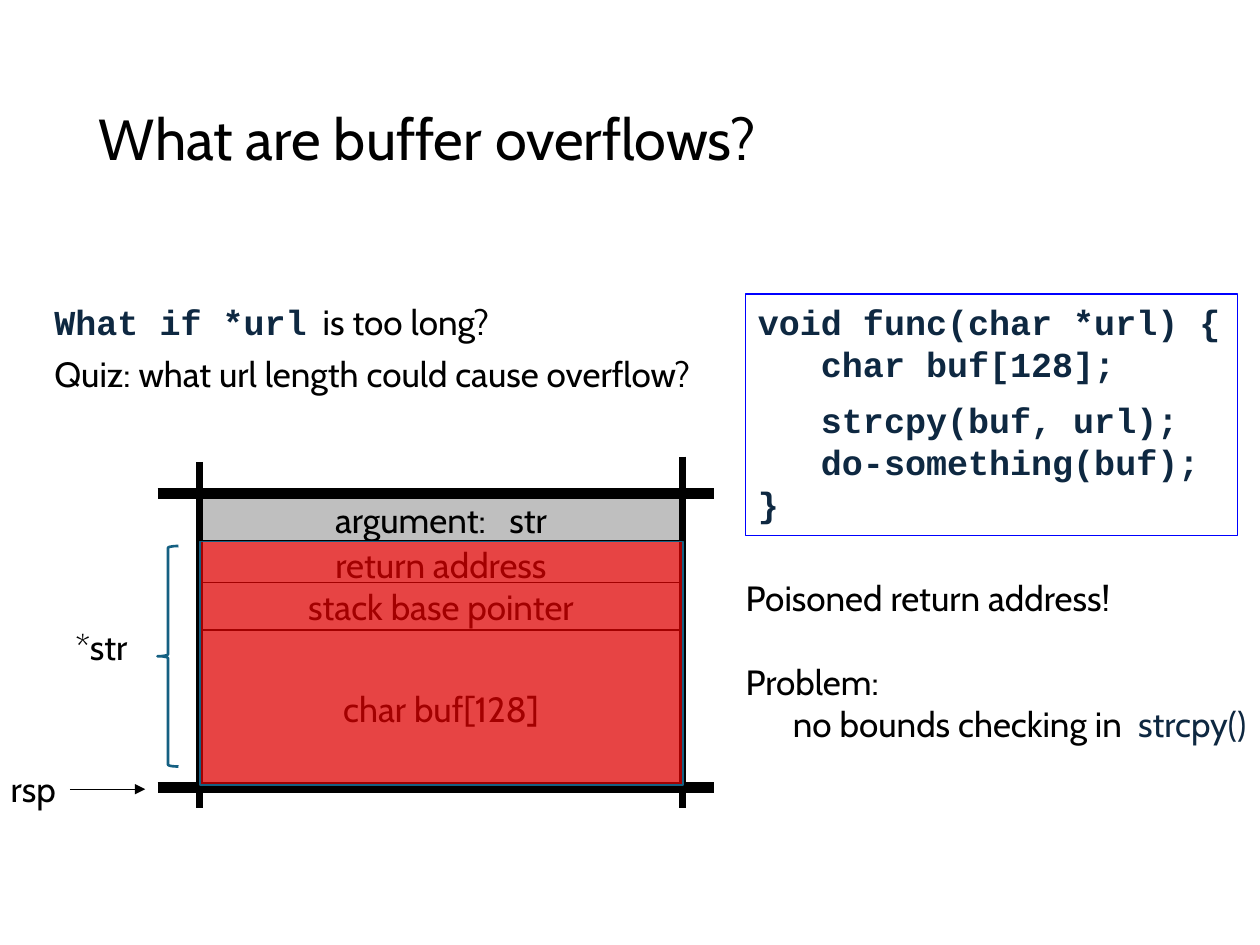
from dataclasses import dataclass

from lxml.etree import SubElement
from pptx import Presentation
from pptx.dml.color import RGBColor
from pptx.enum.shapes import MSO_CONNECTOR as Connector, MSO_SHAPE as Preset
from pptx.enum.text import MSO_ANCHOR as Anchor, MSO_AUTO_SIZE as AutoSize, PP_ALIGN as Align
from pptx.oxml.ns import qn
from pptx.util import Pt


@dataclass(frozen=True)
class Theme:
    black: str = "000000"
    navy: str = "0E2841"
    gray: str = "BFBFBF"
    blue: str = "0000FF"
    red: str = "FF0000"
    teal: str = "156082"
    title_size: int = 33
    body_size: int = 20
    body_font: str = "Cabin"
    code_font: str = "Courier New"


@dataclass
class Paragraph:
    runs: list
    before: float = 0
    indent: float = 0
    align: object = Align.LEFT
    spacing: float = 1.0


class SlideBuilder:
    def __init__(self, slide, theme):
        self.slide = slide
        self.theme = theme

    def plain(self, text, color=None, size=None):
        theme = self.theme
        return text, theme.body_font, color or theme.black, size or theme.body_size, False

    def code(self, text):
        theme = self.theme
        return text, theme.code_font, theme.navy, theme.body_size, True

    def fill_text(self, shape, paragraphs, anchor=Anchor.TOP, fit=False, wrap=False):
        frame = shape.text_frame
        frame.word_wrap = wrap
        frame.vertical_anchor = anchor
        frame.auto_size = AutoSize.SHAPE_TO_FIT_TEXT if fit else AutoSize.NONE
        for index, content in enumerate(paragraphs):
            paragraph = frame.add_paragraph() if index else frame.paragraphs[0]
            paragraph.alignment = content.align
            paragraph.line_spacing = content.spacing
            paragraph.space_before = Pt(content.before)
            if content.indent:
                properties = paragraph._p.get_or_add_pPr()
                properties.set("marL", str(Pt(content.indent)))
                properties.set("indent", "0")
            for text, font_name, color, size, bold in content.runs:
                for line_number, line in enumerate(text.split("\n")):
                    if line_number:
                        paragraph.add_line_break()
                    run = paragraph.add_run()
                    run.text = line
                    run.font.name = font_name
                    run.font.size = Pt(size)
                    run.font.bold = bold
                    run.font.color.rgb = RGBColor.from_string(color)

    def text(self, left, top, width, height, paragraphs, **options):
        shape = self.slide.shapes.add_textbox(Pt(left), Pt(top), Pt(width), Pt(height))
        self.fill_text(shape, paragraphs, **options)
        return shape

    def shape(self, preset, left, top, width, height, line, weight, fill=None, opacity=None):
        shape = self.slide.shapes.add_shape(preset, Pt(left), Pt(top), Pt(width), Pt(height))
        shape.shadow.inherit = False
        shape.line.color.rgb = RGBColor.from_string(line)
        shape.line.width = Pt(weight)
        if fill:
            shape.fill.solid()
            shape.fill.fore_color.rgb = RGBColor.from_string(fill)
        else:
            shape.fill.background()
        if opacity is not None:
            color = shape._element.spPr.find(qn("a:solidFill"))[0]
            SubElement(color, qn("a:alpha")).set("val", str(opacity * 1000))
        return shape

    def line(self, x1, y1, x2, y2, weight, arrow=False):
        line = self.slide.shapes.add_connector(Connector.STRAIGHT, Pt(x1), Pt(y1), Pt(x2), Pt(y2))
        line.line.color.rgb = RGBColor.from_string(self.theme.black)
        line.line.width = Pt(weight)
        if arrow:
            outline = line._element.spPr.find(qn("a:ln"))
            SubElement(outline, qn("a:tailEnd")).set("type", "triangle")
        SubElement(line._element.spPr, qn("a:effectLst"))
        return line


def main():
    presentation = Presentation()
    presentation.slide_width = Pt(720)
    presentation.slide_height = Pt(540)
    theme = Theme()
    slide = presentation.slides.add_slide(presentation.slide_layouts[6])
    builder = SlideBuilder(slide, theme)
    plain, code = builder.plain, builder.code

    title = plain("What are buffer overflows?", size=theme.title_size)
    builder.text(49.5, 28.8, 621, 104.4, [Paragraph([title], spacing=0.9)],
                 anchor=Anchor.MIDDLE, wrap=True)

    listing = builder.shape(Preset.RECTANGLE, 426, 168, 281, 138, theme.blue, 0.75)
    builder.fill_text(listing, [
        Paragraph([code("void func(char *url) {\n   char buf[128];")]),
        Paragraph([code("   strcpy(buf, url);\n   do-something(buf);\n}")], before=8),
    ], fit=True)

    builder.text(24, 168, 404.6, 63.4, [
        Paragraph([code("What if *url"), plain("  is too long?")]),
        Paragraph([plain("Quiz: what url length could cause overflow?")], before=6),
    ], fit=True)

    left, right, top, bottom = 114, 390, 282, 450
    width = right - left
    stack_cells = [
        ("argument:   str", top, 30),
        ("return address", 309, 27),
        ("stack base pointer", 333, 27),
        ("char buf[128]", 360, 90),
    ]
    for label, cell_top, height in stack_cells:
        cell = builder.shape(Preset.RECTANGLE, left, cell_top, width, height,
                             theme.black, 0.75, theme.gray)
        builder.fill_text(cell, [Paragraph([plain(label)], align=Align.CENTER)],
                          anchor=Anchor.MIDDLE)

    pointer = builder.text(-2, 435, 42, 32, [Paragraph([plain("rsp")], align=Align.CENTER)], fit=True)
    arrow = builder.line(40, 451, 83, 451, 0.75, arrow=True)
    arrow.begin_connect(pointer, 3)

    for y in (bottom, top):
        builder.line(left - 24, y, right + 18, y, 6)
    for x, tip in ((left, 264), (right, 261)):
        builder.line(x, tip, x, 288, 4.5)
        builder.line(x, 420, x, 462, 4.5)
    builder.shape(Preset.RECTANGLE, left, top, width, bottom - top, theme.black, 4.5)
    builder.shape(Preset.RECTANGLE, 114.5, 309.5, width, 139, theme.teal, 1, theme.red, opacity=64)

    builder.shape(Preset.LEFT_BRACE, 90, 312, 12, 126, theme.teal, 1.5)
    builder.text(36, 354, 46, 32, [Paragraph([plain("*str")])], fit=True)

    builder.text(419, 326, 309, 104.4, [
        Paragraph([plain("Poisoned return address!")]),
        Paragraph([plain("Problem:")], before=24),
        Paragraph([plain("no bounds checking in  "), plain("strcpy()", theme.navy)], indent=27),
    ], fit=True)

    presentation.save("out.pptx")


if __name__ == "__main__":
    main()
